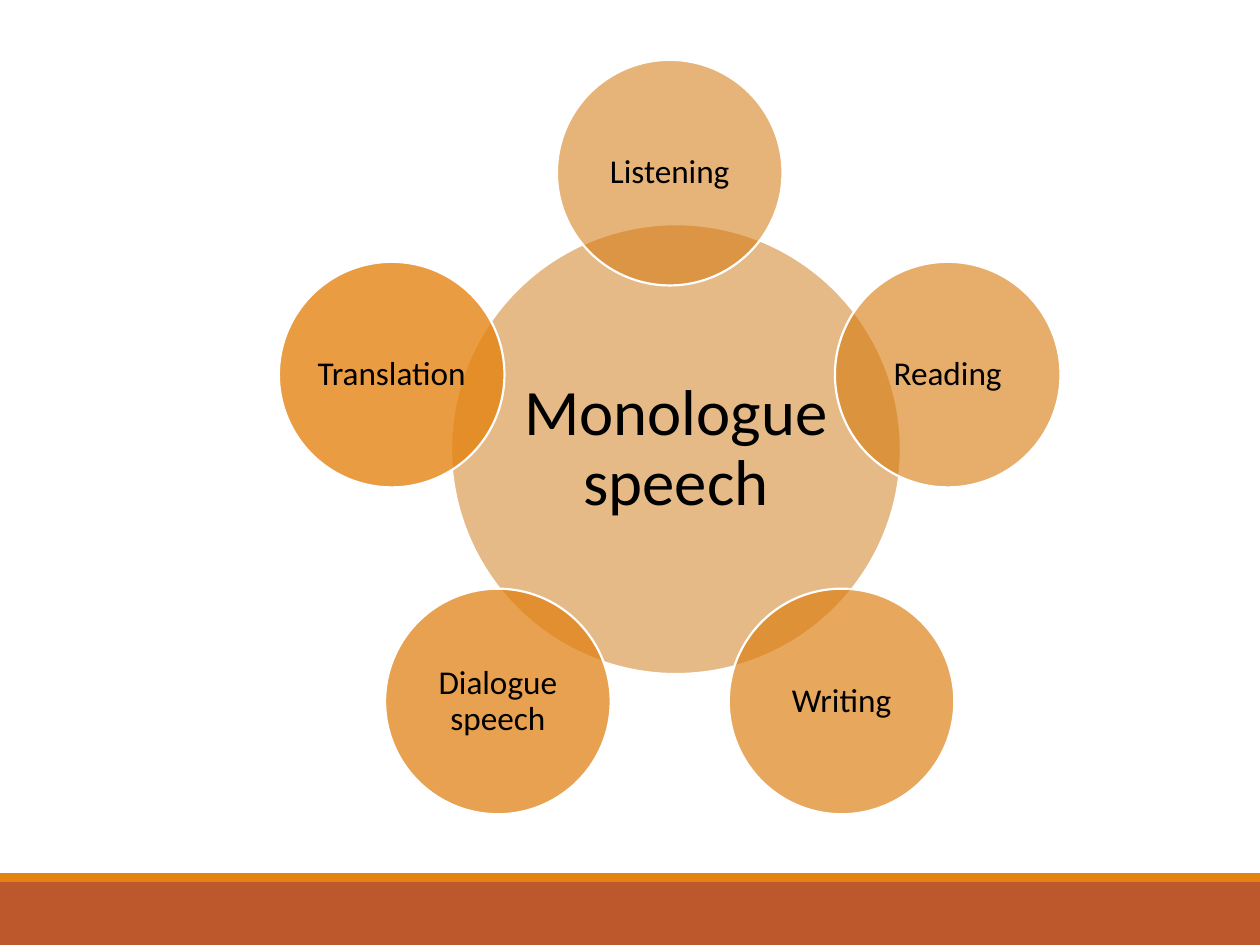
"""Build a slide with a hub circle and a ring of five language skills."""
import math
import pptx
import pptx.util
import pptx.dml.color
import pptx.enum.shapes
import pptx.enum.text
import pptx.oxml
import pptx.oxml.ns

WIDE, HIGH = 10, 7.5
HUES = {"rust": "BD582C", "amber": "E48312", "line": "FFFFFF", "text": "000000",
        "hub": "CF7710", "skills": ["D37911", "D77C11", "DC7F12", "E08113", "E48413"]}
HUB = {"text": "Monologue speech", "mid": (5.365, 3.565), "across": 3.57,
       "size": 37, "pad": 0.05, "hue": HUES["hub"], "alpha": 50}
SKILLS = ["Listening", "Reading", "Writing", "Dialogue speech", "Translation"]
RING = {"mid": (5.315, 3.69), "reach": 2.32}
SKILL = {"across": 1.79, "size": 19, "pad": 0.03}
BANDS = [("rust", 7, 0.5), ("amber", 6.93, 0.07)]
KINDS = pptx.enum.shapes.MSO_SHAPE


def tint(hue):
    return pptx.dml.color.RGBColor.from_string(hue)


def draw(shapes, kind, box, hue):
    shape = shapes.add_shape(kind, *map(pptx.util.Inches, box))
    shape.shadow.inherit = False
    shape.fill.solid()
    shape.fill.fore_color.rgb = tint(hue)
    shape.line.fill.background()
    return shape


def fade(shape, share):
    node = shape.fill._xPr.find(".//" + pptx.oxml.ns.qn("a:srgbClr"))
    alpha = pptx.oxml.parse_xml(
        f'<a:alpha {pptx.oxml.ns.nsdecls("a")} val="{share * 1000}"/>')
    node.append(alpha)


def circle(shapes, text, mid, across, size, pad, hue, alpha):
    left, top = (point - across / 2 for point in mid)
    shape = draw(shapes, KINDS.OVAL, (left, top, across, across), hue)
    fade(shape, alpha)
    shape.line.color.rgb = tint(HUES["line"])
    shape.line.width = pptx.util.Pt(1.25)
    frame = shape.text_frame
    frame.text = text
    frame.word_wrap = True
    frame.vertical_anchor = pptx.enum.text.MSO_ANCHOR.MIDDLE
    for side in ("left", "top", "right", "bottom"):
        setattr(frame, f"margin_{side}", pptx.util.Inches(pad))
    para = frame.paragraphs[0]
    para.alignment = pptx.enum.text.PP_ALIGN.CENTER
    para.line_spacing = 0.9
    font = para.runs[0].font
    for name, value in {"name": "Calibri", "size": pptx.util.Pt(size)}.items():
        setattr(font, name, value)
    font.color.rgb = tint(HUES["text"])


def main():
    deck = pptx.Presentation()
    deck.slide_width = pptx.util.Inches(WIDE)
    deck.slide_height = pptx.util.Inches(HIGH)
    slide = deck.slides.add_slide(deck.slide_layouts[6])
    for hue, top, height in BANDS:
        draw(slide.shapes, KINDS.RECTANGLE, (0, top, WIDE, height), HUES[hue])
    group = slide.shapes.add_group_shape().shapes
    circle(group, **HUB)
    for step, (text, hue) in enumerate(zip(SKILLS, HUES["skills"])):
        turn = math.tau * step / len(SKILLS)
        mid = (RING["mid"][0] + RING["reach"] * math.sin(turn),
               RING["mid"][1] - RING["reach"] * math.cos(turn))
        circle(group, text, mid, hue=hue, alpha=56 + 6 * step, **SKILL)
    deck.save("out.pptx")


if __name__ == "__main__":
    main()
